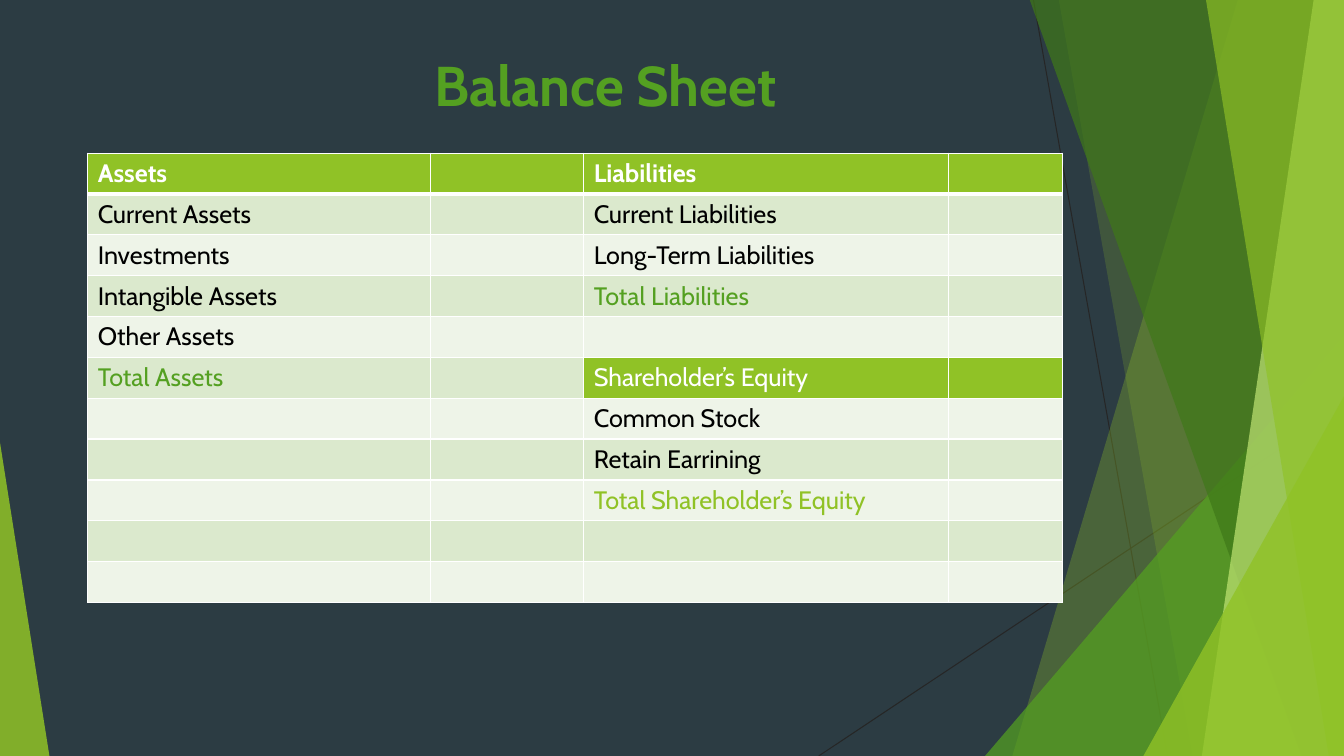
import lxml.etree
import pptx
import pptx.dml.color
import pptx.enum.shapes
import pptx.enum.text
import pptx.oxml.ns
import pptx.util
from pptx.util import Inches

GREEN, LIME, WHITE, BLACK = "54A021", "90C226", "FFFFFF", "000000"
qn = pptx.oxml.ns.qn


def rgb(colour):
    return pptx.dml.color.RGBColor.from_string(colour)


def write(para, text, size, colour, bold):
    span = para.add_run()
    span.text = text
    span.font.name = "Cabin"
    span.font.size = pptx.util.Pt(size)
    span.font.bold = bold
    span.font.color.rgb = rgb(colour)


deck = pptx.Presentation()
deck.slide_width, deck.slide_height = Inches(13.33), Inches(7.5)
page = deck.slides.add_slide(deck.slide_layouts[6])
page.background.fill.solid()
page.background.fill.fore_color.rgb = rgb("2C3C43")

for x1, y1, x2, y2 in [(10.25, 0, 11.58, 7.5), (13.33, 4.03, 8.12, 7.5)]:
    ray = page.shapes.add_connector(
        pptx.enum.shapes.MSO_CONNECTOR.STRAIGHT,
        Inches(x1), Inches(y1), Inches(x2), Inches(y2))
    ray.line.color.rgb = rgb("262626")
    ray.line.width = pptx.util.Pt(0.75)
    lxml.etree.SubElement(ray._element.spPr, qn("a:effectLst"))

# Each facet: kind, geometry, colour, opacity in percent
facets = [
    ("band", (12.28, 10.04), LIME, 30),
    ("band", (10.5, 11.83), LIME, 20),
    ("triangle", (9.77, 3.33, 3.56, 4.17, 1), GREEN, 72),
    ("band", (10.21, 12.91), "3F7819", 70),
    ("band", (13.03, 11.92), "C0E474", 70),
    ("band", (11.96, 13.18), LIME, 65),
    ("triangle", (11.34, 3.93, 1.99, 3.57, 1), LIME, 80),
    ("triangle", (0, 4.39, 0.49, 3.11, 0), LIME, 85),
]
for kind, geometry, colour, opacity in facets:
    if kind == "band":
        top_x, bottom_x = geometry
        outline = page.shapes.build_freeform(Inches(top_x), Inches(-0.01))
        corners = [(13.33, -0.01), (13.33, 7.5), (bottom_x, 7.5)]
        outline.add_line_segments([(Inches(x), Inches(y)) for x, y in corners])
        facet = outline.convert_to_shape()
    else:
        left, top, width, height, apex = geometry
        facet = page.shapes.add_shape(
            pptx.enum.shapes.MSO_SHAPE.ISOSCELES_TRIANGLE,
            Inches(left), Inches(top), Inches(width), Inches(height))
        facet.adjustments[0] = apex
    facet.shadow.inherit = False
    facet.line.fill.background()
    facet.fill.solid()
    facet.fill.fore_color.rgb = rgb(colour)
    tint = facet._element.spPr.find(qn("a:solidFill"))[0]
    lxml.etree.SubElement(tint, qn("a:alpha"), val=str(opacity * 1000))

title = page.shapes.add_textbox(Inches(3.54), Inches(0.45), Inches(4.93), Inches(0.77))
title.text_frame.word_wrap = True
title.text_frame.auto_size = pptx.enum.text.MSO_AUTO_SIZE.SHAPE_TO_FIT_TEXT
heading = title.text_frame.paragraphs[0]
heading.alignment = pptx.enum.text.PP_ALIGN.CENTER
write(heading, "Balance Sheet", 40, GREEN, True)

rows = [
    ("Assets", "Liabilities"),
    ("Current Assets", "Current Liabilities"),
    ("Investments", "Long-Term Liabilities"),
    ("Intangible Assets", "Total Liabilities"),
    ("Other Assets", ""),
    ("Total Assets", "Shareholder’s Equity"),
    ("", "Common Stock"),
    ("", "Retain Earrining"),
    ("", "Total Shareholder’s Equity"),
    ("", ""),
    ("", ""),
]
text_colours = {
    "Assets": WHITE, "Liabilities": WHITE, "Shareholder’s Equity": WHITE,
    "Total Assets": GREEN, "Total Liabilities": GREEN,
    "Total Shareholder’s Equity": LIME,
}
sheet = page.shapes.add_table(
    len(rows), 4, Inches(0.87), Inches(1.52), Inches(9.67), Inches(4.46)).table
for column, width in zip(sheet.columns, [3.4, 1.52, 3.62, 1.13]):
    column.width = Inches(width)

for r, (asset, liability) in enumerate(rows):
    for c, text in enumerate([asset, "", liability, ""]):
        cell = sheet.cell(r, c)
        properties = cell._tc.get_or_add_tcPr()
        for side in "LRTB":
            heavy = (r == 0 and side == "B") or (r == 1 and side == "T")
            width = pptx.util.Pt(3 if heavy else 1)
            border = lxml.etree.SubElement(properties, qn("a:ln" + side), w=str(width))
            paint = lxml.etree.SubElement(border, qn("a:solidFill"))
            lxml.etree.SubElement(paint, qn("a:srgbClr"), val=WHITE)
        is_header = r == 0 or (liability == "Shareholder’s Equity" and c >= 2)
        cell.fill.solid()
        cell.fill.fore_color.rgb = rgb(
            LIME if is_header else "DBE9CD" if r % 2 else "EEF4E8")
        if text:
            write(cell.text_frame.paragraphs[0], text, 18,
                  text_colours.get(text, BLACK), r == 0)

deck.save("out.pptx")
